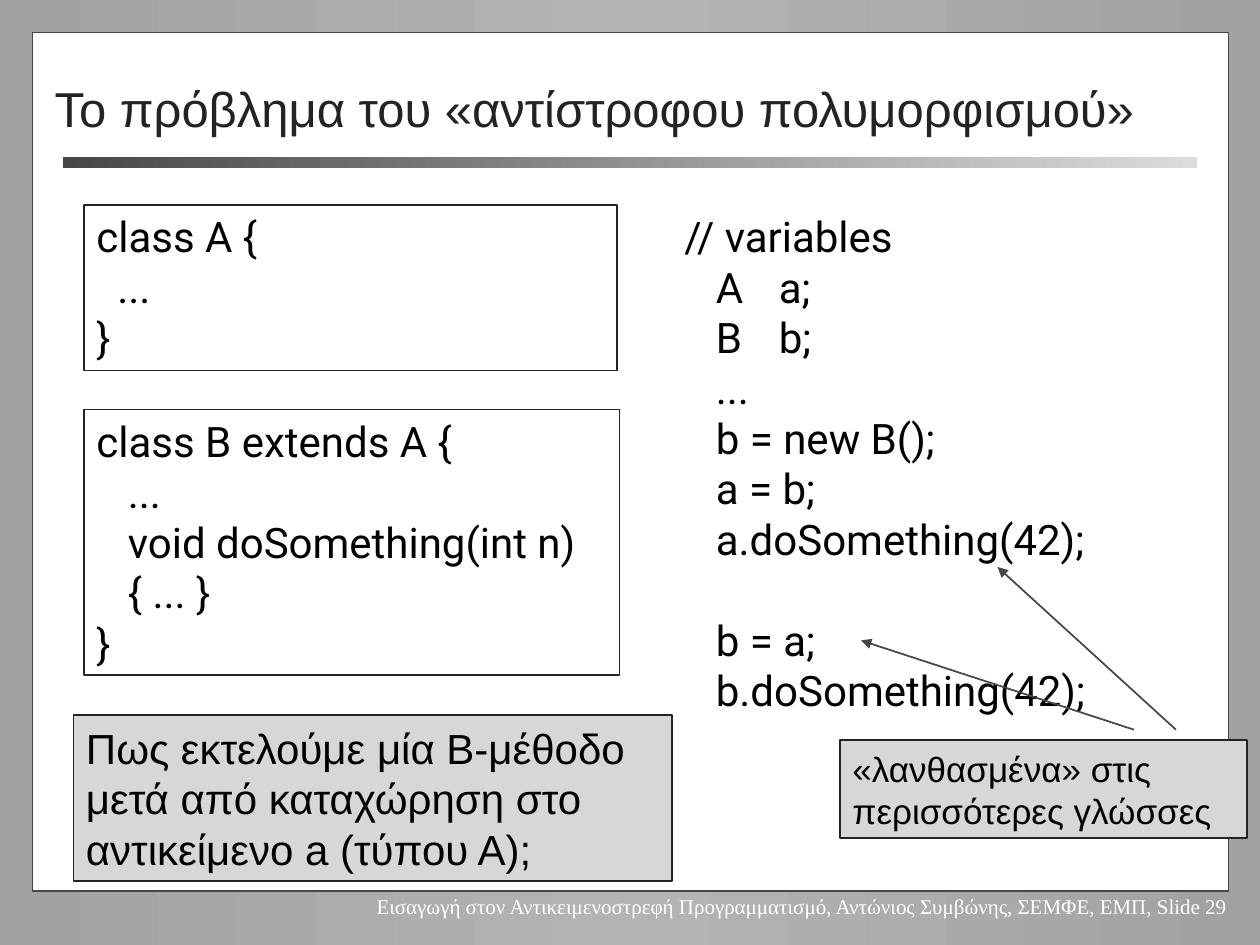
from copy import deepcopy

from lxml import etree
from pptx import Presentation
from pptx import util as u
from pptx.dml.color import RGBColor
from pptx.enum import shapes, text
from pptx.oxml.ns import qn

COLORS = {
    "edge": "A2A2A2", "middle": "B3B3B3", "page": "FFFFFF", "frame": "474747",
    "rule_end": "DCDCDC", "ink": "232323", "code": "000000", "note": "D7D7D7",
}
CELL = u.Inches(1 / 12)  # the slide is a grid of 120 columns by 90 rows


def color(name):
    return RGBColor.from_string(COLORS[name])


def grid(*cells):
    return [round(CELL * cell) for cell in cells]


def fill_gradient(fill, *names):
    """Fill from left to right with evenly spaced colours."""
    fill.gradient()
    fill.gradient_angle = 0
    stop_list = fill.gradient_stops[0]._gs.getparent()
    for _ in names[2:]:
        stop_list.append(deepcopy(stop_list[-1]))
    for index, (stop, name) in enumerate(zip(fill.gradient_stops, names)):
        stop.color.rgb = color(name)
        stop.position = index / (len(names) - 1)


def add_box(slide, box, fill=None, line=None):
    shape = slide.shapes.add_shape(shapes.MSO_SHAPE.RECTANGLE, *grid(*box))
    shape.shadow.inherit = False
    if fill:
        shape.fill.solid()
        shape.fill.fore_color.rgb = color(fill)
    else:
        shape.fill.background()
    if line:
        shape.line.color.rgb = color(line)
        shape.line.width = u.Pt(1)
    else:
        shape.line.fill.background()
    return shape


def write(shape, lines, size=24, font="Roboto", ink="code", anchor="TOP",
          align="LEFT", wrap=True):
    """Write lines; each is text or (text, indent in cells, points before)."""
    frame = shape.text_frame
    frame.word_wrap = wrap
    frame.vertical_anchor = text.MSO_ANCHOR[anchor]
    for index, line in enumerate(lines):
        words, indent, before = (line, 0, 0) if isinstance(line, str) else line
        paragraph = frame.paragraphs[0] if index == 0 else frame.add_paragraph()
        paragraph.alignment = text.PP_ALIGN[align]
        paragraph.space_before = u.Pt(before)
        properties = paragraph._p.get_or_add_pPr()
        properties.set("marL", str(round(CELL * indent)))
        properties.set("indent", "0")
        if "\t" in words:
            tabs = etree.SubElement(properties, qn("a:tabLst"))
            etree.SubElement(tabs, qn("a:tab"), pos=str(round(CELL * 8.5)), algn="l")
        run = paragraph.add_run()
        run.text = words
        run.font.size = u.Pt(size)
        run.font.name = font
        run.font.color.rgb = color(ink)


def add_page(slide):
    fill_gradient(slide.background.fill, "edge", "middle", "edge")
    add_box(slide, (3.1, 3.1, 113.9, 81.8), "page", "frame")
    rule = add_box(slide, (6, 15, 108, 1))
    fill_gradient(rule.fill, "frame", "rule_end")


def add_title(slide, box, words):
    title = slide.shapes.title
    title.left, title.top, title.width, title.height = grid(*box)
    write(title, [words], size=28, font="Arial", ink="ink", anchor="MIDDLE")
    # Keep the title in front of the page.
    title._element.getparent().append(title._element)


def add_footer(slide, box, words):
    footer = slide.shapes.add_textbox(*grid(*box))
    write(footer, [words], size=12, font="Times New Roman", ink="page",
          align="RIGHT", wrap=False)


def add_class(slide, box, lines):
    write(add_box(slide, box, line="ink"), lines)


def add_listing(slide, box, lines):
    write(slide.shapes.add_textbox(*grid(*box)), lines, wrap=False)


def add_note(slide, box, words, size=24):
    note = add_box(slide, box, "note", "ink")
    write(note, [words], size=size, font="Arial", anchor="MIDDLE")


def add_arrow(slide, start, end):
    arrow = slide.shapes.add_connector(
        shapes.MSO_CONNECTOR.STRAIGHT, *grid(*start, *end))
    arrow.line.color.rgb = color("frame")
    arrow.line.width = u.Pt(1)
    etree.SubElement(arrow.line._get_or_add_ln(), qn("a:tailEnd"), type="triangle")
    etree.SubElement(arrow._element.spPr, qn("a:effectLst"))


def main():
    presentation = Presentation()
    presentation.slide_width, presentation.slide_height = grid(120, 90)
    slide = presentation.slides.add_slide(presentation.slide_layouts[5])

    add_page(slide)
    add_footer(slide, (33.5, 84.5, 84.6, 3.6),
               "Εισαγωγή στον Αντικειμενοστρεφή Προγραμματισμό, "
               "Αντώνιος Συμβώνης, ΣΕΜΦΕ, ΕΜΠ, Slide 29")
    add_title(slide, (4, 6.6, 111, 7.4),
              "Το πρόβλημα του «αντίστροφου πολυμορφισμού»")

    add_class(slide, (8, 19.5, 50.8, 15.8), ["class A {", ("...", 2, 0), "}"])
    body = ["...", "void doSomething(int n)", "{ ... }"]
    add_class(slide, (8, 39, 51, 25.3),
              ["class B extends A {", *((line, 3, 0) for line in body), "}"])

    statements = ["A\ta;", "B\tb;", "...", "b = new B();", "a = b;",
                  "a.doSomething(42);"]
    add_listing(slide, (64, 19.5, 41, 49),
                ["// variables", *((line, 3, 0) for line in statements),
                 ("b = a;", 3, 28.8), ("b.doSomething(42);", 3, 0)])

    add_note(slide, (7, 68.1, 57, 15.8),
             "Πως εκτελούμε μία Β-μέθοδο μετά από καταχώρηση στο "
             "αντικείμενο a (τύπου Α);")
    add_note(slide, (80, 70.5, 38.8, 9.3),
             "«λανθασμένα» στις περισσότερες γλώσσες", size=20)
    add_arrow(slide, (108, 69.5), (82, 61))
    add_arrow(slide, (112, 69.5), (95, 54))

    presentation.save("out.pptx")


if __name__ == "__main__":
    main()
